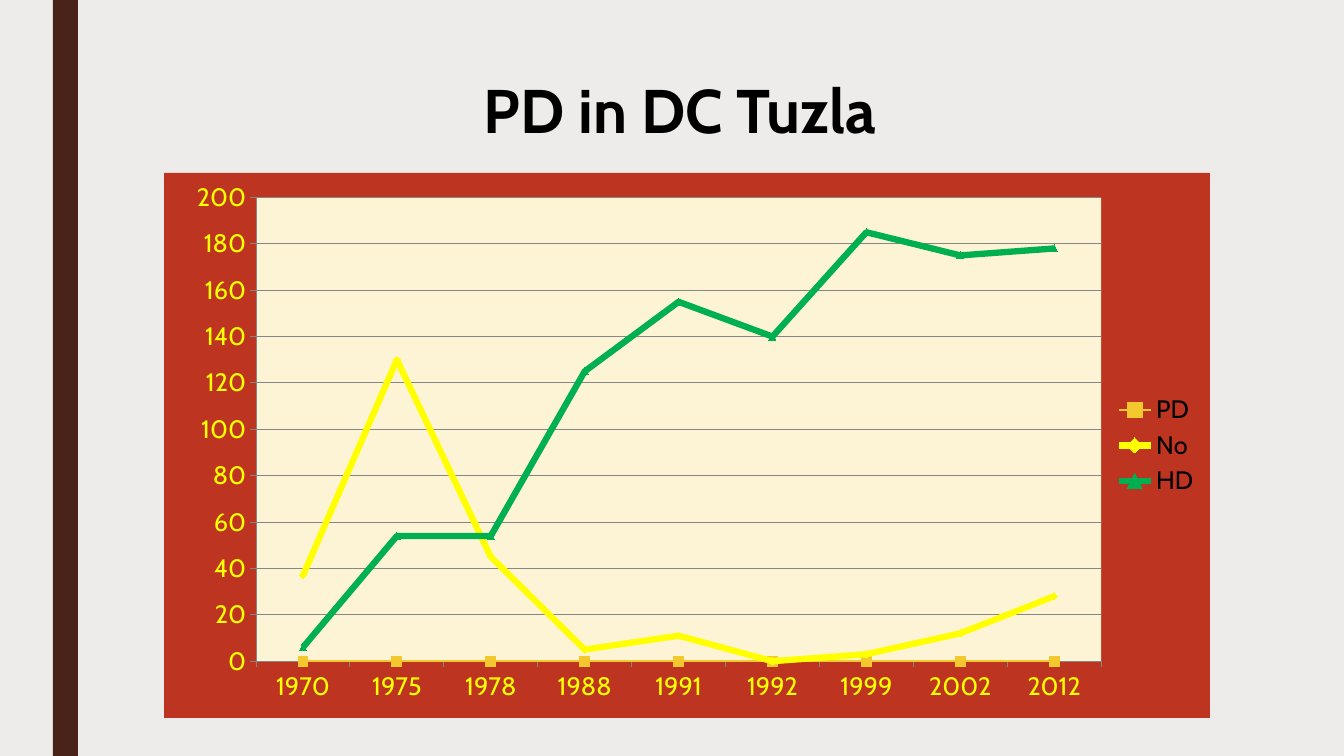
from lxml import etree
from pptx import Presentation
from pptx import util as u
from pptx.chart import data as chart_data
from pptx.dml.color import RGBColor
from pptx.enum import chart as charts, shapes, text
from pptx.oxml import parse_xml
from pptx.oxml.ns import nsdecls, qn

PX = 914400 / 100.8
FONT = "Cabin"
BACKGROUND = RGBColor(0xED, 0xEC, 0xEB)
BROWN = RGBColor(0x4A, 0x23, 0x18)
BLACK = RGBColor(0x00, 0x00, 0x00)
RED = RGBColor(0xBD, 0x35, 0x21)
CREAM = RGBColor(0xFD, 0xF4, 0xD5)
GOLD = RGBColor(0xF3, 0xC8, 0x2E)
YELLOW = RGBColor(0xFF, 0xFF, 0x00)
GREEN = RGBColor(0x00, 0xB0, 0x50)
GREY = RGBColor(0x86, 0x86, 0x86)

YEARS = ["1970", "1975", "1978", "1988", "1991", "1992", "1999", "2002", "2012"]
MARKER = charts.XL_MARKER_STYLE
SERIES = [
    ("PD", [0] * len(YEARS), GOLD, 1.5, MARKER.SQUARE, 7),
    ("No", [37, 130, 45, 5, 11, 0, 3, 12, 28], YELLOW, 4.5, MARKER.DIAMOND, 5),
    ("HD", [6, 54, 54, 125, 155, 140, 185, 175, 178], GREEN, 4.5, MARKER.TRIANGLE, 5),
]
PLOT_LAYOUT = {"x": 0.088, "y": 0.045, "w": 0.808, "h": 0.851}


def box(*lengths):
    """Turn px lengths into EMU."""
    return [u.Emu(round(length * PX)) for length in lengths]


def set_format(target, values):
    """Set each named attribute on the target."""
    for name, value in values.items():
        setattr(target, name, value)


def set_font(font, color, size, bold=False):
    """Give a font the slide's typeface with a colour and size."""
    set_format(font, {"name": FONT, "size": u.Pt(size), "bold": bold})
    font.color.rgb = color


def paint(fill, color):
    """Make a fill solid in one colour."""
    fill.solid()
    fill.fore_color.rgb = color


def add_bar(slide, bounds, color):
    """Draw a plain rectangle without outline."""
    shape = slide.shapes.add_shape(shapes.MSO_SHAPE.RECTANGLE, *box(*bounds))
    shape.shadow.inherit = False
    paint(shape.fill, color)
    shape.line.fill.background()


def add_title(slide, bounds, words):
    """Write the centred slide title."""
    frame = slide.shapes.add_textbox(*box(*bounds)).text_frame
    set_format(frame, {"word_wrap": True, "vertical_anchor": text.MSO_ANCHOR.TOP})
    paragraph = frame.paragraphs[0]
    set_format(paragraph, {"alignment": text.PP_ALIGN.CENTER, "line_spacing": 0.89})
    run = paragraph.add_run()
    run.text = words
    set_font(run.font, BLACK, 44, True)


def style_axis(axis):
    """Colour an axis, its ticks and its labels."""
    set_format(axis, {"major_tick_mark": charts.XL_TICK_MARK.OUTSIDE,
                      "minor_tick_mark": charts.XL_TICK_MARK.NONE})
    set_font(axis.tick_labels.font, YELLOW, 18)
    set_format(axis.format.line, {"width": u.Pt(0.75)})
    axis.format.line.color.rgb = GREY


def style_series(series, color, width, style, size):
    """Set the line and marker of one series."""
    series.smooth = False
    series.format.line.width = u.Pt(width)
    series.format.line.color.rgb = color
    set_format(series.marker, {"style": style, "size": size})
    paint(series.marker.format.fill, color)
    series.marker.format.line.color.rgb = color


def fill_xml(color):
    """Build chart shape properties with a solid fill and no line."""
    return parse_xml(
        f'<c:spPr {nsdecls("c", "a")}><a:solidFill><a:srgbClr val="{color}"/>'
        "</a:solidFill><a:ln><a:noFill/></a:ln></c:spPr>")


def place_plot(chart):
    """Fix the inner plot area and fill both chart backgrounds."""
    chart_space = chart._chartSpace
    plot_area = chart_space.chart.plotArea
    for layout in plot_area.findall(qn("c:layout")):
        plot_area.remove(layout)
    layout = etree.Element(qn("c:layout"))
    manual = etree.SubElement(layout, qn("c:manualLayout"))
    settings = {"layoutTarget": "inner", "xMode": "edge", "yMode": "edge", **PLOT_LAYOUT}
    for name, value in settings.items():
        etree.SubElement(manual, qn(f"c:{name}")).set("val", str(value))
    plot_area.insert(0, layout)
    plot_area.append(fill_xml(CREAM))
    chart_space.chart.addnext(fill_xml(RED))


def add_line_chart(slide, bounds):
    """Add the chart of patients by year."""
    data = chart_data.CategoryChartData()
    data.categories = YEARS
    for name, values, *_ in SERIES:
        data.add_series(name, values)
    chart = slide.shapes.add_chart(
        charts.XL_CHART_TYPE.LINE_MARKERS, *box(*bounds), data).chart
    set_format(chart, {"has_title": False, "has_legend": True})
    set_font(chart.font, BLACK, 18)
    set_format(chart.legend, {"position": charts.XL_LEGEND_POSITION.RIGHT,
                              "include_in_layout": False})
    set_font(chart.legend.font, BLACK, 18)
    chart.plots[0].vary_by_categories = False
    for series, (_, _, *look) in zip(chart.plots[0].series, SERIES):
        style_series(series, *look)
    for axis in (chart.category_axis, chart.value_axis):
        style_axis(axis)
    set_format(chart.value_axis, {"minimum_scale": 0, "maximum_scale": 200,
                                  "major_unit": 20, "has_major_gridlines": True})
    gridline = chart.value_axis.major_gridlines.format.line
    gridline.width = u.Pt(0.75)
    gridline.color.rgb = GREY
    place_plot(chart)


def main():
    """Build and save the slide."""
    presentation = Presentation()
    set_format(presentation, dict(zip(("slide_width", "slide_height"), box(1344, 756))))
    slide = presentation.slides.add_slide(presentation.slide_layouts[6])
    paint(slide.background.fill, BACKGROUND)
    add_bar(slide, (53, 0, 25, 756), BROWN)
    add_title(slide, (151, 76, 1058, 98), "PD in DC Tuzla")
    add_line_chart(slide, (164, 173, 1046, 545))
    presentation.save("out.pptx")


if __name__ == "__main__":
    main()
